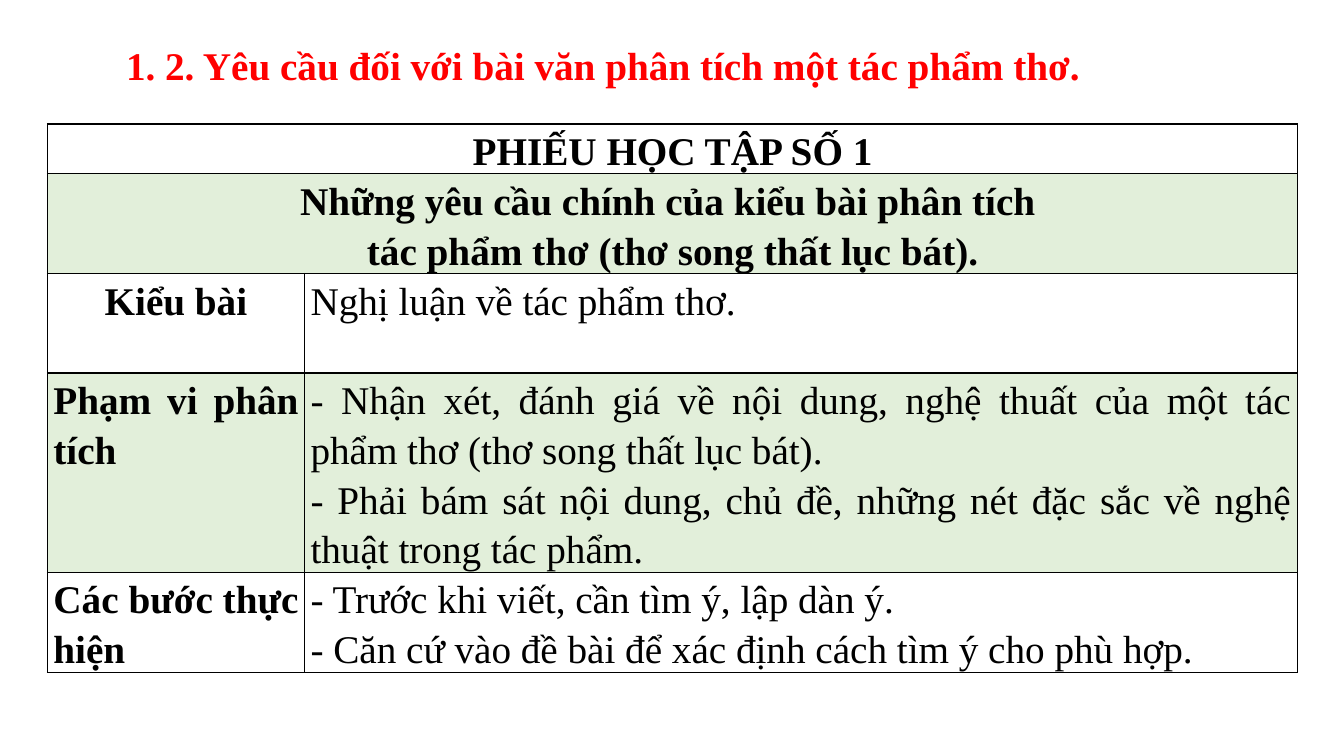
from dataclasses import dataclass

from lxml import etree
from pptx import Presentation, util as u
from pptx.dml.color import RGBColor
from pptx.enum import text
from pptx.oxml.ns import qn

WIDTH, HEIGHT = u.Inches(13.33), u.Inches(7.5)
FONT, SIZE = "Times New Roman", 28
BLACK, RED, GREEN = "000000", "FF0000", "E2EFDA"
LEFT, CENTER, JUSTIFY = text.PP_ALIGN.LEFT, text.PP_ALIGN.CENTER, text.PP_ALIGN.JUSTIFY
LINE = u.Inches(0.493)
COLUMNS = (u.Inches(2.55), u.Inches(9.85))


@dataclass(frozen=True)
class Entry:
    """Lines of one cell and how they are set."""
    lines: tuple[str, ...]
    align: text.PP_ALIGN = JUSTIFY
    bold: bool = False


@dataclass(frozen=True)
class Row:
    """One table row, its height in text lines; a single entry spans the row."""
    height: int
    entries: tuple[Entry, ...]
    fill: str | None = None


ROWS = (
    Row(1, (Entry(("PHIẾU HỌC TẬP SỐ 1",), CENTER, True),)),
    Row(2, (Entry(("Những yêu cầu chính của kiểu bài phân tích ",
                   "tác phẩm thơ (thơ song thất lục bát)."), CENTER, True),), GREEN),
    Row(2, (Entry(("Kiểu bài",), CENTER, True),
            Entry(("Nghị luận về tác phẩm thơ.",), LEFT))),
    Row(4, (Entry(("Phạm vi phân tích",), bold=True),
            Entry(("- Nhận xét, đánh giá về nội dung, nghệ thuất của một tác phẩm thơ "
                   "(thơ song thất lục bát). ",
                   "- Phải bám sát nội dung, chủ đề, những nét đặc sắc về nghệ thuật "
                   "trong tác phẩm."))), GREEN),
    Row(2, (Entry(("Các bước thực hiện",), bold=True),
            Entry(("- Trước khi viết, cần tìm ý, lập dàn ý.",
                   "- Căn cứ vào đề bài để xác định cách tìm ý cho phù hợp.")))),
)


def color(value: str) -> RGBColor:
    """Turn a hex string into a colour."""
    return RGBColor.from_string(value)


def write(frame, entry: Entry, ink: str) -> None:
    """Fill a text frame with the lines of an entry."""
    for index, line in enumerate(entry.lines):
        paragraph = frame.paragraphs[0] if index == 0 else frame.add_paragraph()
        paragraph.alignment = entry.align
        paragraph.line_spacing = 1.15
        run = paragraph.add_run()
        run.text = line
        run.font.name, run.font.size, run.font.bold = FONT, u.Pt(SIZE), entry.bold
        run.font.color.rgb = color(ink)


def format_cell(cell, fill: str | None) -> None:
    """Set the borders, margins and fill of a cell."""
    properties = cell._tc.get_or_add_tcPr()
    for side in ("lnL", "lnR", "lnT", "lnB"):
        border = etree.SubElement(properties, qn(f"a:{side}"), w=str(u.Pt(1)))
        solid = etree.SubElement(border, qn("a:solidFill"))
        etree.SubElement(solid, qn("a:srgbClr"), val=BLACK)
    cell.margin_left = cell.margin_right = u.Inches(0.06)
    cell.margin_top = cell.margin_bottom = 0
    if fill:
        cell.fill.solid()
        cell.fill.fore_color.rgb = color(fill)
    else:
        cell.fill.background()


def add_title(slide) -> None:
    """Place and write the slide title."""
    title = slide.shapes.title
    title.left, title.top = u.Inches(1.15), u.Inches(0.29)
    title.width, title.height = u.Inches(9.77), u.Inches(0.6)
    frame = title.text_frame
    frame.word_wrap = True
    frame.auto_size = text.MSO_AUTO_SIZE.NONE
    frame.vertical_anchor = text.MSO_ANCHOR.TOP
    heading = "1. 2. Yêu cầu đối với bài văn phân tích một tác phẩm thơ."
    write(frame, Entry((heading,), JUSTIFY, True), RED)


def add_worksheet(slide) -> None:
    """Draw the worksheet table."""
    height = LINE * sum(row.height for row in ROWS)
    table = slide.shapes.add_table(len(ROWS), len(COLUMNS), u.Inches(0.47), u.Inches(1.23),
                                   sum(COLUMNS), height).table
    table.first_row = table.horz_banding = False
    for column, width in zip(table.columns, COLUMNS):
        column.width = width
    for index, row in enumerate(ROWS):
        table.rows[index].height = LINE * row.height
        for column in range(len(COLUMNS)):
            format_cell(table.cell(index, column), row.fill)
        if len(row.entries) == 1:
            table.cell(index, 0).merge(table.cell(index, len(COLUMNS) - 1))
        for column, entry in enumerate(row.entries):
            write(table.cell(index, column).text_frame, entry, BLACK)


def main() -> None:
    """Build the slide and save it."""
    presentation = Presentation()
    presentation.slide_width, presentation.slide_height = WIDTH, HEIGHT
    slide = presentation.slides.add_slide(presentation.slide_layouts[5])
    add_worksheet(slide)
    add_title(slide)
    presentation.save("out.pptx")


if __name__ == "__main__":
    main()
